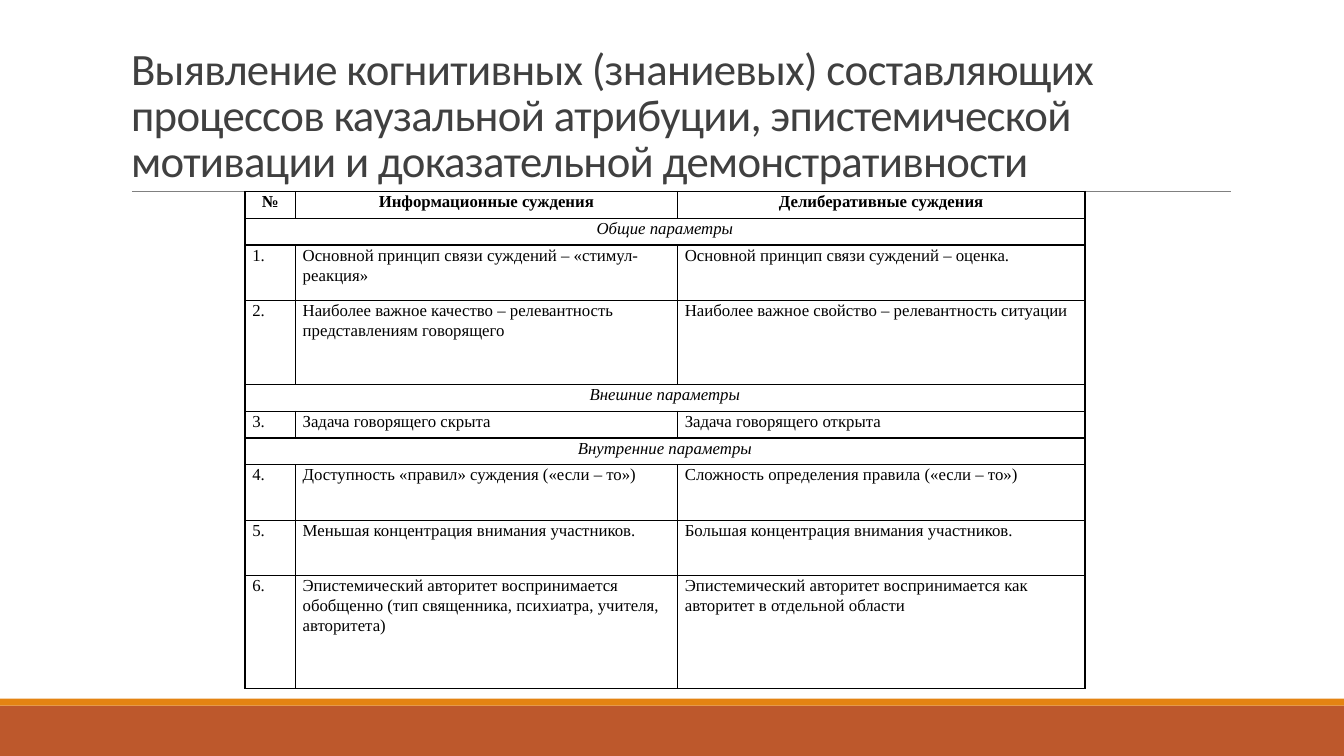
"""Build a slide that compares informational and deliberative judgements."""
import pptx
import pptx.util
import pptx.dml.color
import pptx.enum.shapes
import pptx.enum.text
import pptx.oxml

Pt = pptx.util.Pt
Align = pptx.enum.text.PP_ALIGN
Anchor = pptx.enum.text.MSO_ANCHOR
RGB = pptx.dml.color.RGBColor.from_string
NS = 'xmlns:a="http://schemas.openxmlformats.org/drawingml/2006/main"'
hues = {"rust": "BD582C", "amber": "E48312", "rule": "808080",
        "title": "404040", "ink": "000000"}


def write(frame, text, font="Times New Roman", size=12, hue="ink", bold=False,
          slant=False, align=Align.LEFT, lead=1.07, after=8, track=0):
    frame.word_wrap = True
    para = frame.paragraphs[0]
    para.alignment = align
    para.line_spacing = lead
    para.space_before = Pt(0)
    para.space_after = Pt(after)
    run = para.add_run()
    run.text = text
    run.font.name = font
    run.font.size = Pt(size)
    run.font.bold = bold
    run.font.italic = slant
    run.font.color.rgb = RGB(hues[hue])
    if track:
        run.font._element.set("spc", str(track))


deck = pptx.Presentation()
deck.slide_width = Pt(960)
deck.slide_height = Pt(540)
slide = deck.slides.add_slide(deck.slide_layouts[5])
shapes = slide.shapes

for hue, top, high in (("rust", 504, 36), ("amber", 499, 5)):
    bar = shapes.add_shape(pptx.enum.shapes.MSO_SHAPE.RECTANGLE,
                           Pt(0), Pt(top), Pt(960), Pt(high))
    bar.shadow.inherit = False
    bar.fill.solid()
    bar.fill.fore_color.rgb = RGB(hues[hue])
    bar.line.fill.background()

rule = shapes.add_connector(pptx.enum.shapes.MSO_CONNECTOR.STRAIGHT,
                            Pt(94.3), Pt(136.8), Pt(879), Pt(136.8))
rule.line.color.rgb = RGB(hues["rule"])
rule.line.width = Pt(0.5)
rule._element.spPr.append(pptx.oxml.parse_xml(f"<a:effectLst {NS}/>"))

title = shapes.title
title.left, title.top, title.width, title.height = Pt(86.4), Pt(22.3), Pt(792), Pt(114.5)
title.text_frame.vertical_anchor = Anchor.BOTTOM
title.text_frame.auto_size = pptx.enum.text.MSO_AUTO_SIZE.NONE
write(title.text_frame,
      "Выявление когнитивных (знаниевых) составляющих процессов каузальной "
      "атрибуции, эпистемической мотивации и доказательной демонстративности",
      font="Calibri", size=32, hue="title", lead=0.85, after=0, track=-50)

low, mid = 19.1, 39.6
rows = [
    (low, "№", "Информационные суждения", "Делиберативные суждения"),
    (low, "Общие параметры"),
    (mid, "1.", "Основной принцип связи суждений – «стимул-реакция»",
     "Основной принцип связи суждений – оценка."),
    (60.2, "2.", "Наиболее важное качество – релевантность представлениям говорящего",
     "Наиболее важное свойство – релевантность ситуации"),
    (low, "Внешние параметры"),
    (low, "3.", "Задача говорящего скрыта", "Задача говорящего открыта"),
    (low, "Внутренние параметры"),
    (mid, "4.", "Доступность «правил» суждения («если – то»)",
     "Сложность определения правила («если – то»)"),
    (mid, "5.", "Меньшая концентрация внимания участников.",
     "Большая концентрация внимания участников."),
    (80.6, "6.", "Эпистемический авторитет воспринимается обобщенно "
     "(тип священника, психиатра, учителя, авторитета)",
     "Эпистемический авторитет воспринимается как авторитет в отдельной области"),
]
wides = (36, 273, 291)
table = shapes.add_table(len(rows), len(wides), Pt(175), Pt(136.8), Pt(sum(wides)),
                         Pt(sum(row[0] for row in rows))).table
table.first_row = False
table.horz_banding = False
for col, wide in zip(table.columns, wides):
    col.width = Pt(wide)

for r, (high, *texts) in enumerate(rows):
    table.rows[r].height = Pt(high)
    group = len(texts) == 1
    if group:
        table.cell(r, 0).merge(table.cell(r, 2))
    for c in range(len(wides)):
        cell = table.cell(r, c)
        cell.margin_left = cell.margin_right = Pt(5.2)
        cell.margin_top = cell.margin_bottom = Pt(0)
        cell.vertical_anchor = Anchor.TOP
        cell.fill.background()
        props = cell._tc.get_or_add_tcPr()
        for i, side in enumerate("LRTB"):
            props.insert(i, pptx.oxml.parse_xml(
                f'<a:ln{side} {NS} w="{Pt(1)}"><a:solidFill><a:srgbClr '
                f'val="{hues["ink"]}"/></a:solidFill></a:ln{side}>'))
    for c, text in enumerate(texts):
        write(table.cell(r, c).text_frame, text, bold=r == 0, slant=group,
              align=Align.CENTER if group or r == 0 else Align.LEFT)

deck.save("out.pptx")
